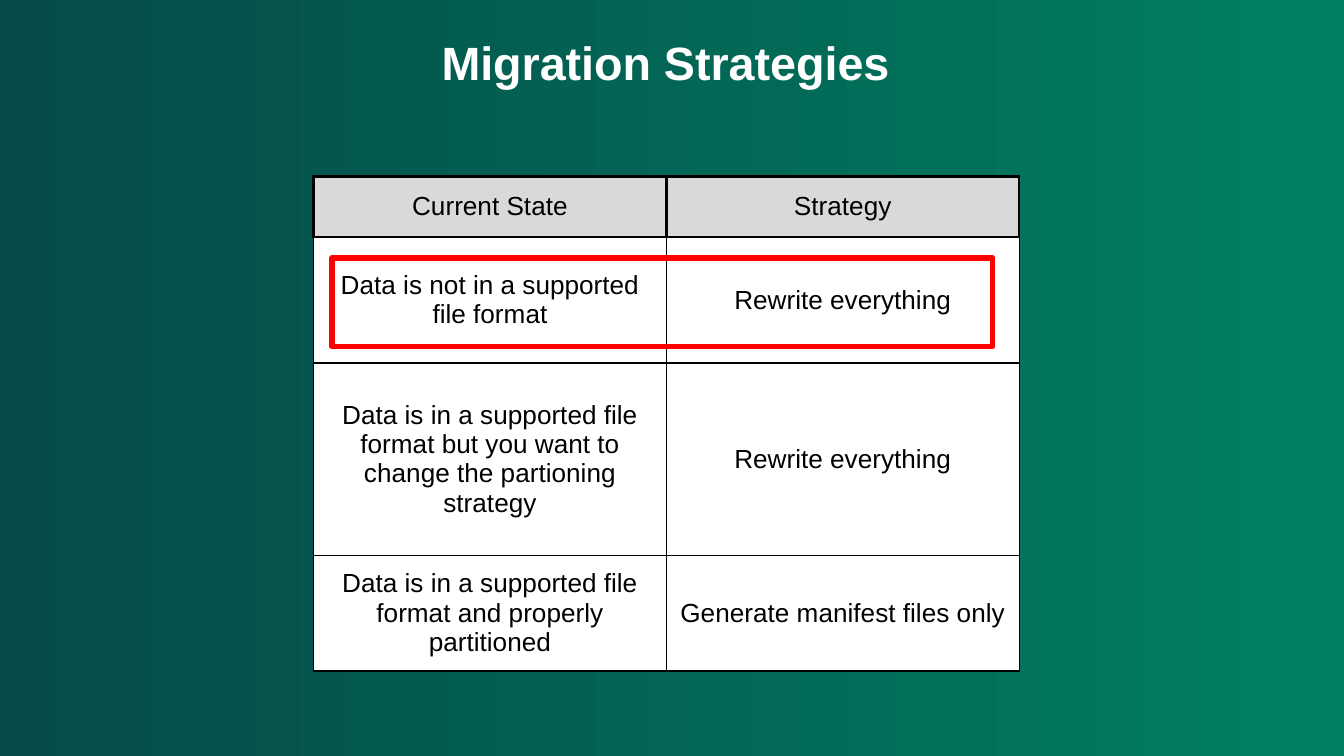
from dataclasses import dataclass

from lxml import etree
from pptx import Presentation
from pptx.dml.color import RGBColor
from pptx.enum import shapes, text
from pptx.oxml import ns
from pptx.util import Pt


@dataclass(frozen=True)
class Theme:
    font: str = "Arial"
    title_size: float = 25
    body_size: float = 14
    background_start: str = "054A49"
    background_end: str = "008060"
    title: str = "FFFFFF"
    body: str = "000000"
    header_fill: str = "D9D9D9"
    body_fill: str = "FFFFFF"
    border: str = "000000"
    highlight: str = "FF0000"


@dataclass(frozen=True)
class Box:
    left: float
    top: float
    width: float
    height: float

    def lengths(self) -> tuple:
        return Pt(self.left), Pt(self.top), Pt(self.width), Pt(self.height)


@dataclass(frozen=True)
class Row:
    current_state: str
    strategy: str
    height: float


THEME = Theme()
SLIDE_WIDTH, SLIDE_HEIGHT = 720, 405
TITLE_BOX = Box(181.5, 13.5, 350, 39)
HIGHLIGHT_BOX = Box(177.8, 138.2, 354, 47.5)
TABLE_LEFT, TABLE_TOP, COLUMN_WIDTH = 168, 94.5, 189
CELL_MARGIN = 7.2
THICK, THIN = 1.5, 0.75
ROWS = [
    Row("Current State", "Strategy", 32.4),
    Row("Data is not in a supported file format", "Rewrite everything", 67.6),
    Row("Data is in a supported file format but you want to change "
        "the partioning strategy", "Rewrite everything", 103),
    Row("Data is in a supported file format and properly partitioned",
        "Generate manifest files only", 62),
]


def set_background(slide) -> None:
    fill = slide.background.fill
    fill.gradient()
    fill.gradient_angle = 0
    colors = (THEME.background_start, THEME.background_end)
    for stop, position, color in zip(fill.gradient_stops, (0, 1), colors):
        stop.position = position
        stop.color.rgb = RGBColor.from_string(color)


def format_paragraph(paragraph, size: float, color: str, bold: bool = False) -> None:
    paragraph.alignment = text.PP_ALIGN.CENTER
    paragraph.font.name = THEME.font
    paragraph.font.size = Pt(size)
    paragraph.font.bold = bold
    paragraph.font.color.rgb = RGBColor.from_string(color)


def add_title(slide, wording: str) -> None:
    title = slide.shapes.title
    title.left, title.top, title.width, title.height = TITLE_BOX.lengths()
    frame = title.text_frame
    frame.text = wording
    frame.word_wrap = True
    frame.auto_size = text.MSO_AUTO_SIZE.NONE
    frame.vertical_anchor = text.MSO_ANCHOR.MIDDLE
    frame.margin_left = frame.margin_right = frame.margin_top = frame.margin_bottom = 0
    format_paragraph(frame.paragraphs[0], THEME.title_size, THEME.title, bold=True)


def set_borders(cell, widths: dict[str, float]) -> None:
    """Draw each side, given in schema order, ahead of the cell's fill."""
    properties = cell._tc.get_or_add_tcPr()
    for index, (side, width) in enumerate(widths.items()):
        line = etree.Element(ns.qn(f"a:ln{side}"), w=str(Pt(width)))
        fill = etree.SubElement(line, ns.qn("a:solidFill"))
        etree.SubElement(fill, ns.qn("a:srgbClr"), val=THEME.border)
        properties.insert(index, line)


def format_cell(cell, wording: str, row_index: int) -> None:
    is_header = row_index == 0
    cell.text = wording
    cell.vertical_anchor = text.MSO_ANCHOR.MIDDLE
    cell.margin_left = cell.margin_right = Pt(CELL_MARGIN)
    cell.margin_top = cell.margin_bottom = Pt(CELL_MARGIN)
    format_paragraph(cell.text_frame.paragraphs[0], THEME.body_size, THEME.body)
    cell.fill.solid()
    cell.fill.fore_color.rgb = RGBColor.from_string(
        THEME.header_fill if is_header else THEME.body_fill)
    widths = dict.fromkeys("LRTB", THICK if is_header else THIN)
    if row_index == 1:
        widths["T"] = THICK
    set_borders(cell, widths)


def add_strategy_table(slide, rows: list[Row]) -> None:
    box = Box(TABLE_LEFT, TABLE_TOP, 2 * COLUMN_WIDTH, sum(row.height for row in rows))
    table = slide.shapes.add_table(len(rows), 2, *box.lengths()).table
    table.horz_banding = False
    for column in table.columns:
        column.width = Pt(COLUMN_WIDTH)
    for row_index, row in enumerate(rows):
        table.rows[row_index].height = Pt(row.height)
        for column_index, wording in enumerate((row.current_state, row.strategy)):
            format_cell(table.cell(row_index, column_index), wording, row_index)


def add_highlight(slide, box: Box) -> None:
    frame = slide.shapes.add_shape(shapes.MSO_SHAPE.RECTANGLE, *box.lengths())
    frame.shadow.inherit = False
    frame.fill.background()
    frame.line.color.rgb = RGBColor.from_string(THEME.highlight)
    frame.line.width = Pt(3)


def main() -> None:
    presentation = Presentation()
    presentation.slide_width = Pt(SLIDE_WIDTH)
    presentation.slide_height = Pt(SLIDE_HEIGHT)
    slide = presentation.slides.add_slide(
        presentation.slide_layouts.get_by_name("Title Only"))
    set_background(slide)
    add_title(slide, "Migration Strategies")
    add_strategy_table(slide, ROWS)
    add_highlight(slide, HIGHLIGHT_BOX)
    presentation.save("out.pptx")


if __name__ == "__main__":
    main()
